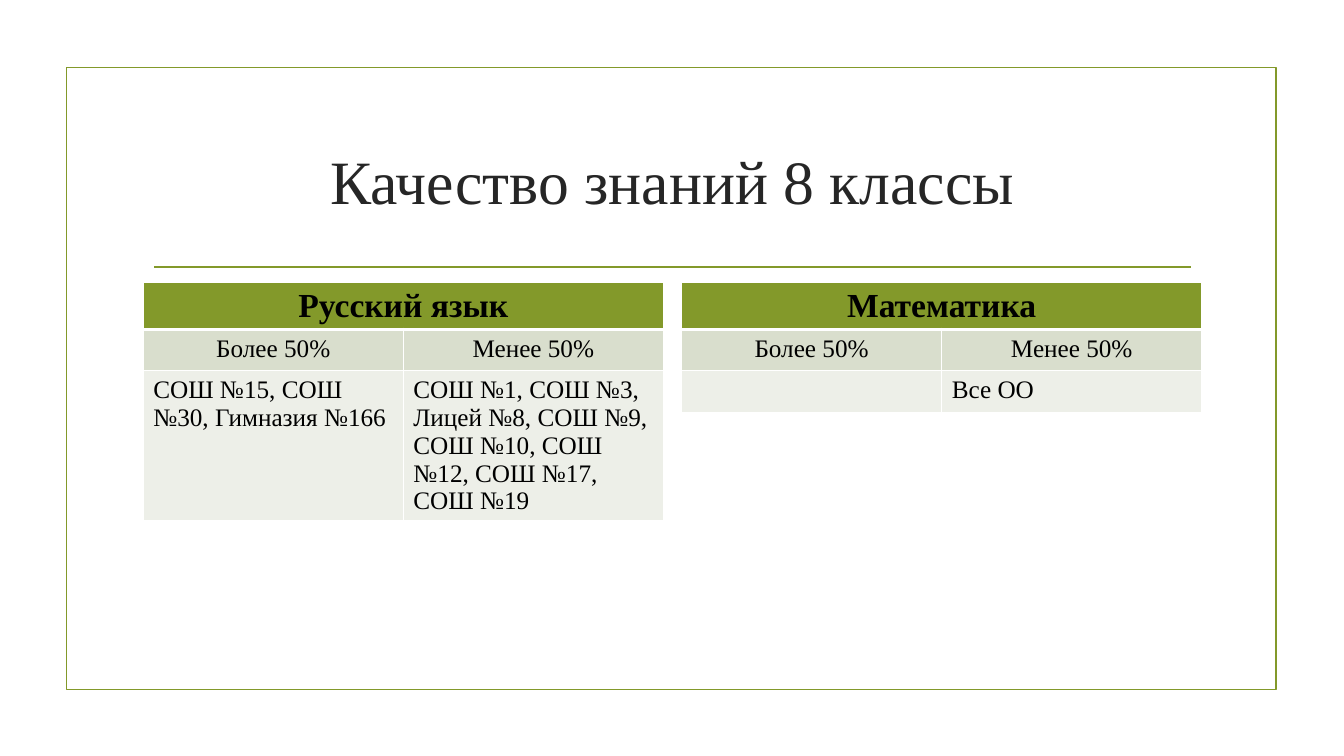
from lxml.etree import SubElement
from pptx import Presentation
from pptx.dml.color import RGBColor
from pptx.enum.shapes import MSO_CONNECTOR, MSO_SHAPE
from pptx.enum.text import MSO_ANCHOR, PP_ALIGN
from pptx.oxml import parse_xml
from pptx.oxml.ns import nsdecls, qn
from pptx.util import Inches, Pt

FONT = "Times New Roman"
GREEN = RGBColor(0x83, 0x99, 0x2A)
SAGE = RGBColor(0xD9, 0xDE, 0xCD)
PALE = RGBColor(0xED, 0xEF, 0xE8)
INK = RGBColor(0x26, 0x26, 0x26)
BLACK = RGBColor(0, 0, 0)
WHITE = RGBColor(0xFF, 0xFF, 0xFF)

WIDE, HIGH = 13.33, 7.5
LEFT, TOP = 1.42, 2.8
COL, ROW, GAP = 2.58, 0.41, 0.18
SPAN = 4 * COL + GAP

HEADS = ["Более 50%", "Менее 50%"]
GROUPS = [
    ("Русский язык", [
        "СОШ №15, СОШ №30, Гимназия №166",
        "СОШ №1, СОШ №3, Лицей №8, СОШ №9, СОШ №10, СОШ №12, СОШ №17, СОШ №19",
    ]),
    ("Математика", ["", "Все ОО"]),
]


def write(frame, text, size=18, color=BLACK, bold=False, align=PP_ALIGN.LEFT):
    """Put formatted text into a text frame."""
    frame.text = text
    par = frame.paragraphs[0]
    par.alignment = align
    for font in [par.font] + [run.font for run in par.runs]:
        font.name, font.size, font.bold = FONT, Pt(size), bold
        font.color.rgb = color


def edge(cell, base):
    """Give a cell white borders with the given bottom width."""
    props = cell._tc.get_or_add_tcPr()
    for spot, side in enumerate("LRTB"):
        width = Pt(base if side == "B" else 1)
        props.insert(spot, parse_xml(
            f'<a:ln{side} {nsdecls("a")} w="{width}"><a:solidFill>'
            f'<a:srgbClr val="{WHITE}"/></a:solidFill></a:ln{side}>'))


def grid(slide, left, name, cells):
    """Add a table with a merged heading over two columns."""
    table = slide.shapes.add_table(
        3, 2, Inches(left), Inches(TOP), Inches(2 * COL), Inches(3 * ROW)).table
    rows = [([name, ""], GREEN, 3), (HEADS, SAGE, 1), (cells, PALE, 1)]
    for i, (texts, fill, base) in enumerate(rows):
        for j, text in enumerate(texts):
            cell = table.cell(i, j)
            cell.fill.solid()
            cell.fill.fore_color.rgb = fill
            edge(cell, base)
            write(cell.text_frame, text, size=18 if i else 24, bold=i == 0,
                  align=PP_ALIGN.LEFT if i == 2 else PP_ALIGN.CENTER)
    table.cell(0, 0).merge(table.cell(0, 1))


def frame(slide):
    """Draw the green outline around the slide."""
    box = slide.shapes.add_shape(
        MSO_SHAPE.RECTANGLE, Inches(0.66), Inches(0.67), Inches(12), Inches(6.17))
    box.shadow.inherit = False
    box.fill.background()
    box.line.color.rgb = GREEN
    box.line.width = Pt(1.25)


def rule(slide):
    """Draw the line under the title."""
    line = slide.shapes.add_connector(
        MSO_CONNECTOR.STRAIGHT, Inches(1.53), Inches(2.65), Inches(11.81), Inches(2.65))
    line.line.color.rgb = GREEN
    line.line.width = Pt(1.25)
    SubElement(line._element.spPr, qn("a:effectLst"))


def head(slide, text):
    """Place and format the title."""
    title = slide.shapes.title
    title.left, title.top = Inches(LEFT), Inches(1.07)
    title.width, title.height = Inches(SPAN), Inches(1.43)
    title.text_frame.vertical_anchor = MSO_ANCHOR.MIDDLE
    write(title.text_frame, text, size=44, color=INK, align=PP_ALIGN.CENTER)


def main():
    """Build and save the slide."""
    deck = Presentation()
    deck.slide_width, deck.slide_height = Inches(WIDE), Inches(HIGH)
    slide = deck.slides.add_slide(deck.slide_layouts[5])
    frame(slide)
    rule(slide)
    head(slide, "Качество знаний 8 классы")
    for i, (name, cells) in enumerate(GROUPS):
        grid(slide, LEFT + i * (2 * COL + GAP), name, cells)
    deck.save("out.pptx")


if __name__ == "__main__":
    main()
